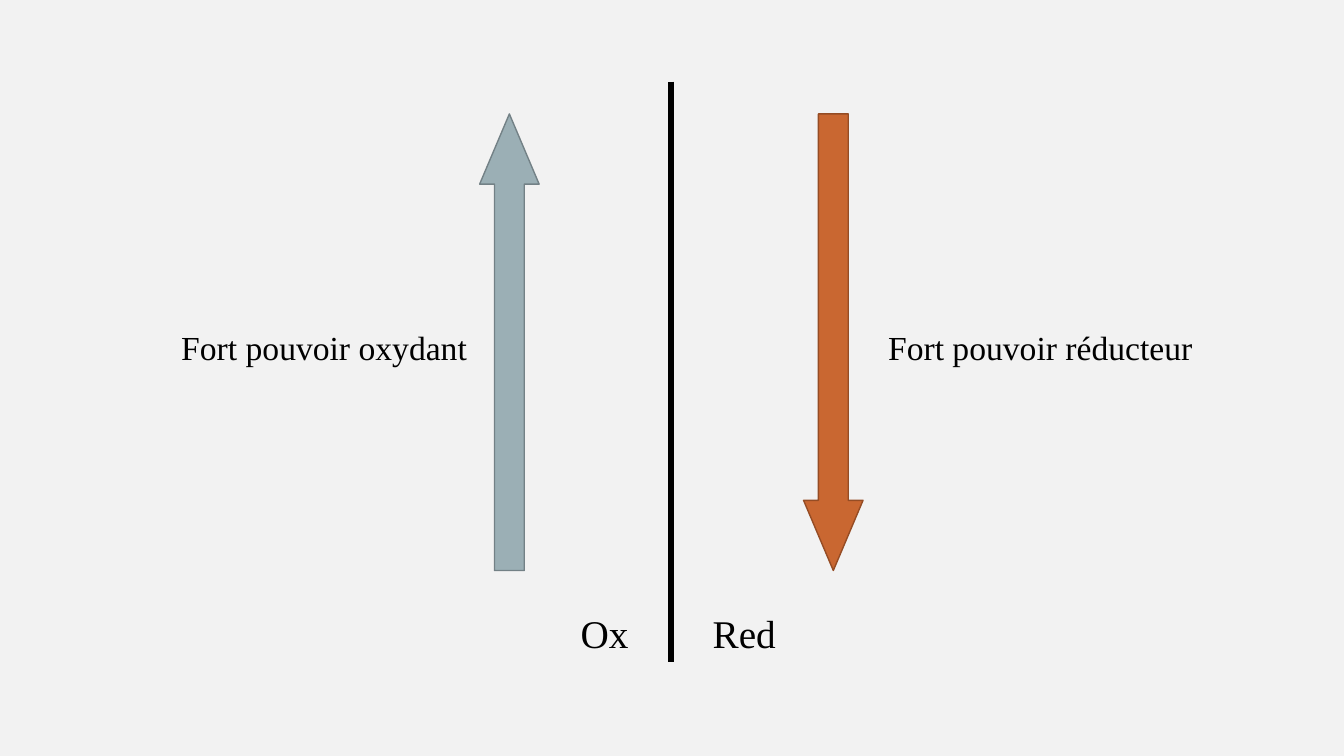
import pptx
import pptx.dml.color
import pptx.enum.shapes
import pptx.enum.text
import pptx.oxml.xmlchemy
import pptx.util
import lxml.etree

SLIDE_WIDTH = pptx.util.Inches(13.33)
SLIDE_HEIGHT = pptx.util.Inches(7.5)
FONT = "Times New Roman"
BLACK = "000000"


def across(percent):
    return round(SLIDE_WIDTH * percent / 100)


def down(percent):
    return round(SLIDE_HEIGHT * percent / 100)


def color(value):
    return pptx.dml.color.RGBColor.from_string(value)


def add_divider(slide, x, top, bottom):
    line = slide.shapes.add_connector(
        pptx.enum.shapes.MSO_CONNECTOR.STRAIGHT,
        across(x), down(top), across(x), down(bottom))
    line.line.color.rgb = color(BLACK)
    line.line.width = pptx.util.Pt(4.5)
    properties = line._element.spPr
    lxml.etree.SubElement(properties, pptx.oxml.ns.qn("a:effectLst"))


def add_power_arrow(slide, center, rotation, fill, outline):
    length, thickness = down(60.4), down(7.87)
    arrow = slide.shapes.add_shape(
        pptx.enum.shapes.MSO_SHAPE.RIGHT_ARROW,
        across(center) - length // 2, down(45.27) - thickness // 2,
        length, thickness)
    arrow.adjustments[0] = 0.5
    arrow.adjustments[1] = 1.18
    arrow.rotation = rotation
    arrow.shadow.inherit = False
    arrow.fill.solid()
    arrow.fill.fore_color.rgb = color(fill)
    arrow.line.color.rgb = color(outline)
    arrow.line.width = pptx.util.Pt(1)


def add_label(slide, text, *, left, top, width, height, size):
    label = slide.shapes.add_textbox(
        across(left), down(top), across(width), down(height))
    frame = label.text_frame
    frame.word_wrap = False
    frame.auto_size = pptx.enum.text.MSO_AUTO_SIZE.SHAPE_TO_FIT_TEXT
    run = frame.paragraphs[0].add_run()
    run.text = text
    run.font.name = FONT
    run.font.size = pptx.util.Pt(size)
    run.font.color.rgb = color(BLACK)


def main():
    presentation = pptx.Presentation()
    presentation.slide_width = SLIDE_WIDTH
    presentation.slide_height = SLIDE_HEIGHT
    slide = presentation.slides.add_slide(presentation.slide_layouts[6])
    slide.background.fill.solid()
    slide.background.fill.fore_color.rgb = color("F2F2F2")

    add_divider(slide, 49.95, 10.8, 87.6)
    add_power_arrow(slide, 37.9, 270, "9BAFB5", "738186")
    add_power_arrow(slide, 62, 90, "C96731", "954C24")

    power = {"top": 42.53, "height": 6.67, "size": 24}
    add_label(slide, "Fort pouvoir oxydant", left=12.75, width=22.95, **power)
    add_label(slide, "Fort pouvoir réducteur", left=65.34, width=24.38, **power)

    species = {"top": 80, "height": 7.6, "size": 28}
    add_label(slide, "Ox", left=42.46, width=5.1, **species)
    add_label(slide, "Red", left=52.29, width=6.23, **species)

    presentation.save("out.pptx")


if __name__ == "__main__":
    main()
